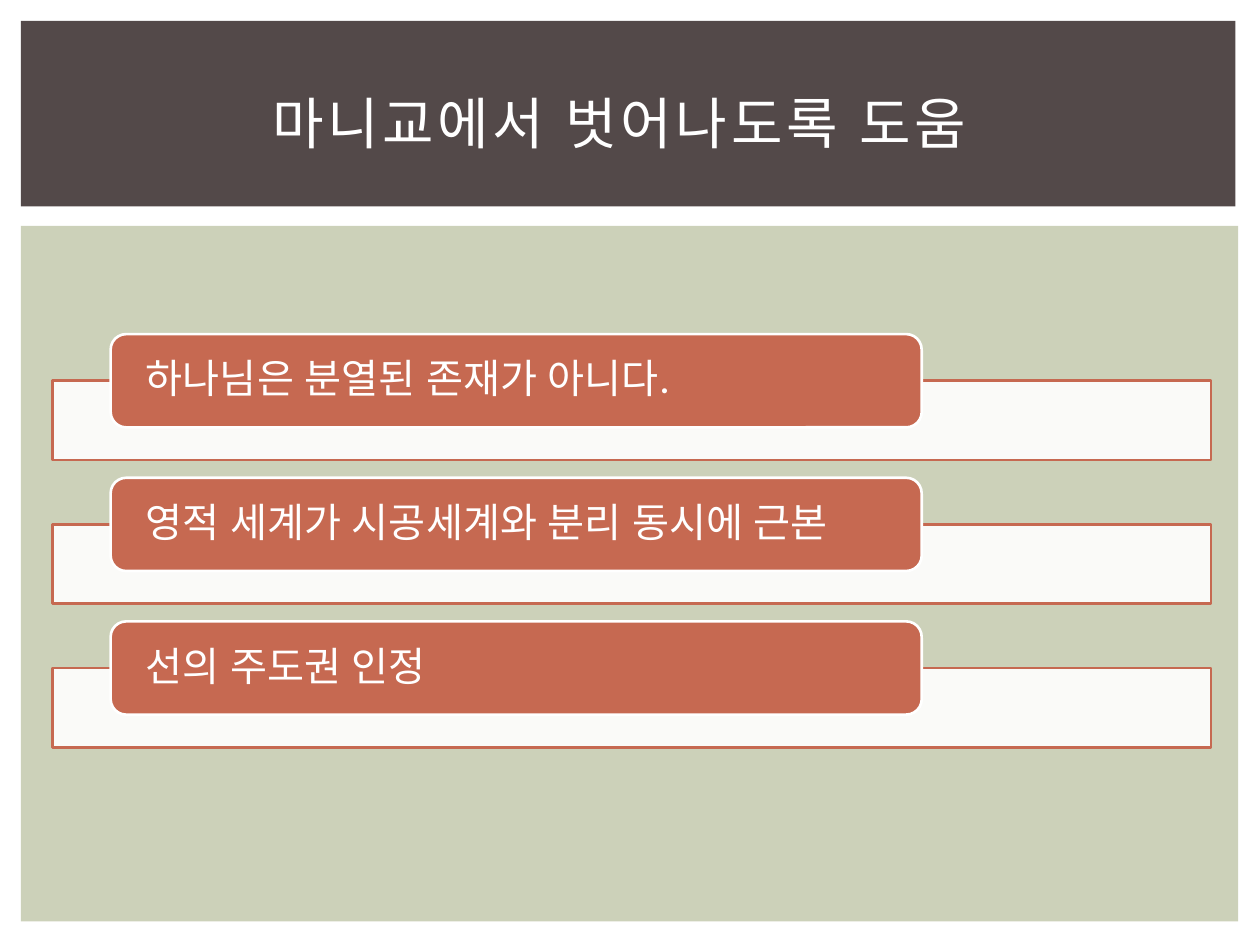
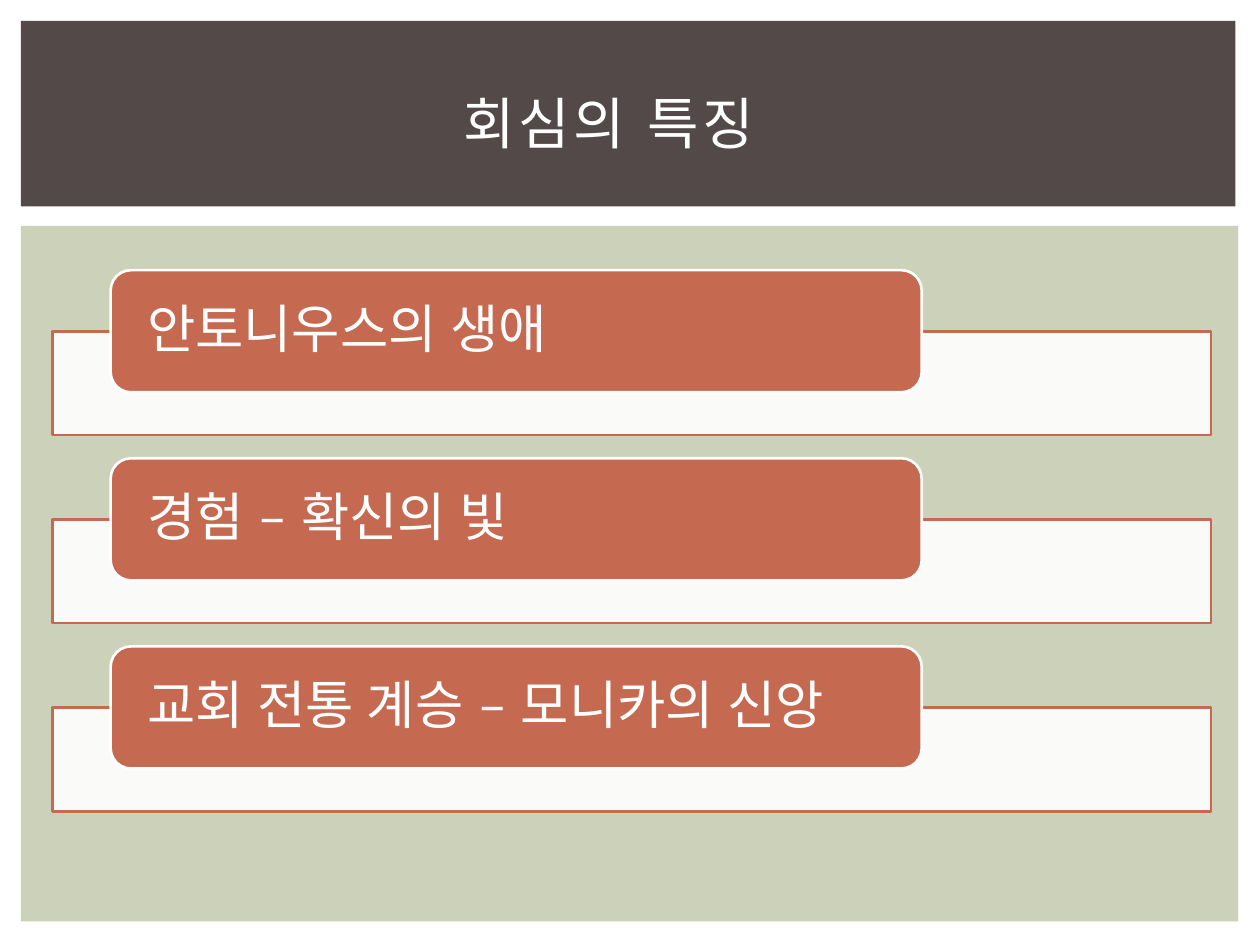
from pptx import Presentation
from pptx.dml.color import RGBColor as RGB
from pptx.enum.shapes import MSO_SHAPE as Kind
from pptx.enum.text import MSO_ANCHOR as Anchor, PP_ALIGN as Align
from pptx.oxml.ns import qn
from pptx.util import Pt
from lxml.etree import SubElement as Sub

HUES = {"white": "FFFFFF", "sage": "CCD1B9", "dark": "534949", "rust": "C66951"}
FONT = "Lato"
MID = 309  # vertical centre of the list
DECK = [
    {"title": "마니교에서 벗어나도록 도움", "shift": 12, "size": 23, "tall": 53.3,
     "items": ["하나님은 분열된 존재가 아니다.",
               "영적 세계가 시공세계와 분리 동시에 근본",
               "선의 주도권 인정"]},
    {"title": "회심의 특징", "shift": 24, "size": 30, "tall": 69.8,
     "items": ["안토니우스의 생애",
               "경험 – 확신의 빛",
               "교회 전통 계승 – 모니카의 신앙"]},
]


class Deck:
    def __init__(self):
        self.prs = Presentation()
        self.prs.slide_width, self.prs.slide_height = Pt(720), Pt(540)
        self.slide = None

    def page(self):
        """Start a slide with its backdrop and title band."""
        self.slide = self.prs.slides.add_slide(self.prs.slide_layouts[6])
        self.box((12, 129, 695.5, 397.5), "sage")
        self.box((12, 12, 694, 106), "dark")

    def box(self, at, fill, line=None, kind=Kind.RECTANGLE, alpha=None):
        shape = self.slide.shapes.add_shape(kind, *map(Pt, at))
        shape.shadow.inherit = False
        shape.fill.solid()
        shape.fill.fore_color.rgb = RGB.from_string(HUES[fill])
        if alpha:
            tint = shape.fill._xPr.find(f".//{qn('a:srgbClr')}")
            Sub(tint, qn("a:alpha"), val=str(alpha * 1000))
        if line:
            shape.line.color.rgb = RGB.from_string(HUES[line])
            shape.line.width = Pt(1.5)
        else:
            shape.line.fill.background()
        return shape

    def text(self, shape, words, size, pads, form, track=0):
        """Write one paragraph; pads are left, top, right and bottom."""
        frame = shape.text_frame
        frame.word_wrap = True
        frame.vertical_anchor = Anchor.MIDDLE
        for side, pad in zip(("left", "top", "right", "bottom"), pads):
            setattr(frame, f"margin_{side}", Pt(pad))
        para = frame.paragraphs[0]
        for key, value in form.items():
            setattr(para, key, value)
        run = para.add_run()
        run.text = words
        run.font.size, run.font.name = Pt(size), FONT
        run.font.color.rgb = RGB.from_string(HUES["white"])
        props = run.font._element
        Sub(props, qn("a:ea"), typeface=FONT)
        if track:
            props.set("spc", str(track * 100))

    def title(self, words, shift):
        """Centre the title, moved left by half of shift."""
        shape = self.slide.shapes.add_textbox(*map(Pt, (30, 28, 660, 83)))
        self.text(shape, words, 32, (7.2, 3.6, 7.2 + shift, 3.6),
                  {"alignment": Align.CENTER}, track=2)

    def list(self, items, size, tall):
        """Stack labels of the given height, each over a wide bar."""
        step, deep = 1.54 * tall, 0.85 * tall
        top = MID - (step * (len(items) - 1) + tall / 2 + deep) / 2
        form = {"alignment": Align.LEFT, "line_spacing": 0.9,
                "space_after": Pt(0.35 * size)}
        for row, words in enumerate(items):
            y = top + row * step
            self.box((30, y + tall / 2, 662, deep), "white", "rust", alpha=90)
            label = self.box((63.2, y, 463.5, tall), "rust", "white",
                             Kind.ROUNDED_RECTANGLE)
            self.text(label, words, size, (17.5, 0, 17.5, 0), form)


def main():
    deck = Deck()
    for page in DECK:
        deck.page()
        deck.list(page["items"], page["size"], page["tall"])
        deck.title(page["title"], page["shift"])
    deck.prs.save("out.pptx")


if __name__ == "__main__":
    main()
